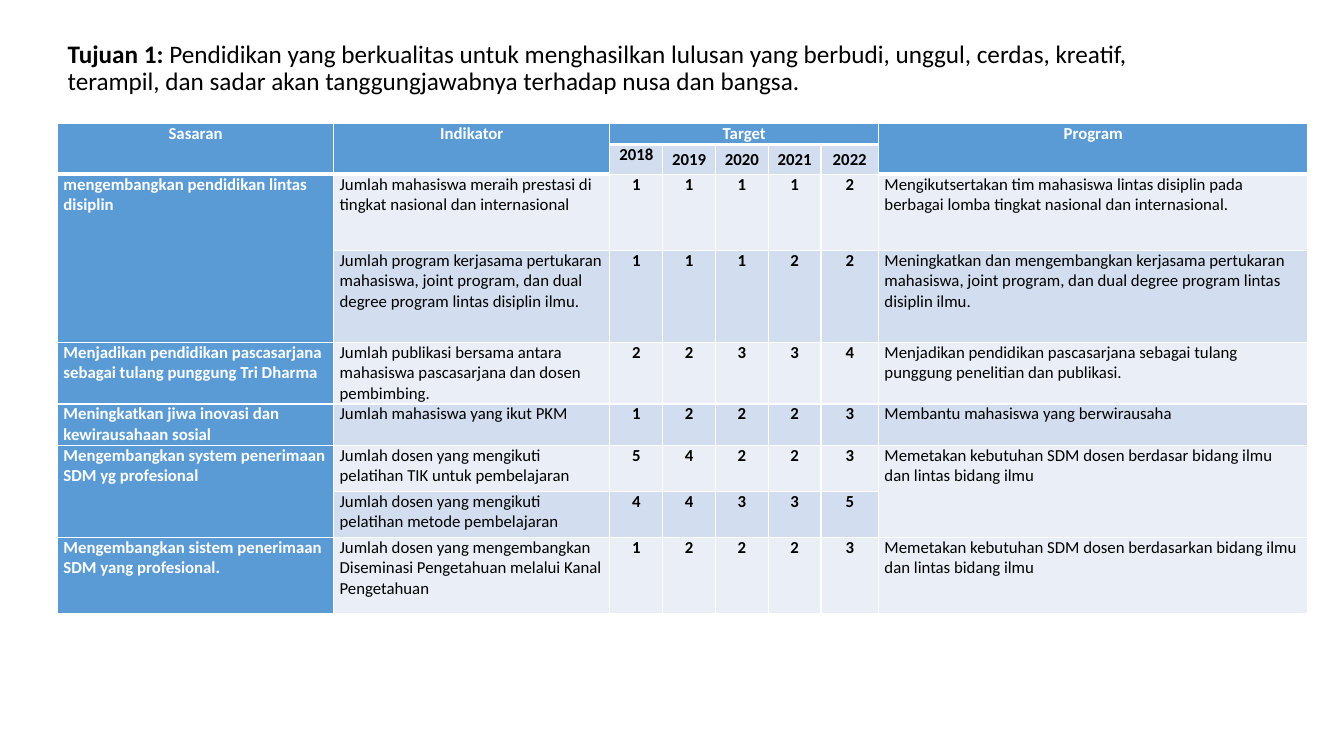
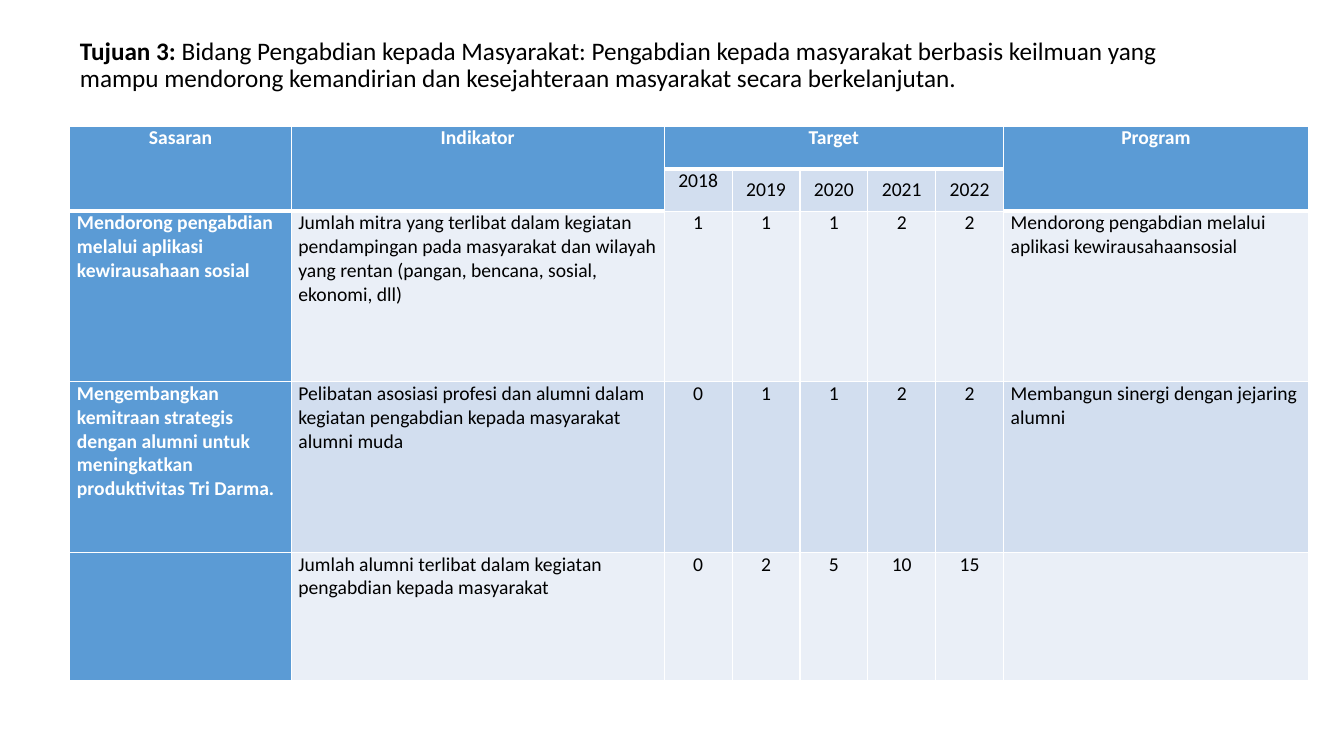
import lxml.etree
import pptx
import pptx.dml.color
import pptx.enum.text
import pptx.oxml.ns
import pptx.util

Cm = pptx.util.Cm
Pt = pptx.util.Pt
ALIGN = pptx.enum.text.PP_ALIGN
ANCHOR = pptx.enum.text.MSO_ANCHOR

FONT = "Calibri"
BLUE, PALE, LIGHT = "5B9BD5", "D2DEEF", "EAEFF7"
WHITE, BLACK = "FFFFFF", "000000"
HEADS = ["Sasaran", "Indikator", "Target", "", "", "", "", "Program"]
YEARS = ["", "", "2018", "2019", "2020", "2021", "2022", ""]
FIRST, LAST = 2, 6
SPANS = [(0, 0, 1, 0), (0, 1, 1, 1), (0, FIRST, 0, LAST), (0, 7, 1, 7)]

GOALS = [
    {
        "label": "Tujuan 1: ",
        "text": "Pendidikan yang berkualitas untuk menghasilkan lulusan yang berbudi, unggul, cerdas, kreatif, terampil, dan sadar akan tanggungjawabnya terhadap nusa dan bangsa.",
        "title": (1.45, 0.84, 29.21, 1.8),
        "at": (1.45, 3.12),
        "cols": [6.96, 6.96] + [1.33] * 4 + [1.45, 10.82],
        "rows": [0.52, 0.75, 1.92, 2.32, 1.55, 1.04, 1.16, 1.16, 1.92],
        "size": 12,
        "inset": 0.15,
        "bold": True,
        "spans": [(2, 0, 3, 0), (6, 0, 7, 0), (6, 7, 7, 7)],
        "data": [
            ["mengembangkan pendidikan lintas disiplin",
             "Jumlah mahasiswa meraih prestasi di tingkat nasional dan internasional",
             1, 1, 1, 1, 2,
             "Mengikutsertakan tim mahasiswa lintas disiplin pada berbagai lomba tingkat nasional dan internasional."],
            ["",
             "Jumlah program kerjasama pertukaran mahasiswa, joint program, dan dual degree program lintas disiplin ilmu.",
             1, 1, 1, 2, 2,
             "Meningkatkan dan mengembangkan kerjasama pertukaran mahasiswa, joint program, dan dual degree program lintas disiplin ilmu."],
            ["Menjadikan pendidikan pascasarjana sebagai tulang punggung Tri Dharma",
             "Jumlah publikasi bersama antara mahasiswa pascasarjana dan dosen pembimbing.",
             2, 2, 3, 3, 4,
             "Menjadikan pendidikan pascasarjana sebagai tulang punggung penelitian dan publikasi."],
            ["Meningkatkan jiwa inovasi dan kewirausahaan sosial",
             "Jumlah mahasiswa yang ikut PKM",
             1, 2, 2, 2, 3,
             "Membantu mahasiswa yang berwirausaha"],
            ["Mengembangkan system penerimaan SDM yg profesional",
             "Jumlah dosen yang mengikuti pelatihan TIK untuk pembelajaran",
             5, 4, 2, 2, 3,
             "Memetakan kebutuhan SDM dosen berdasar bidang ilmu dan lintas bidang ilmu"],
            ["",
             "Jumlah dosen yang mengikuti pelatihan metode pembelajaran",
             4, 4, 3, 3, 5,
             ""],
            ["Mengembangkan sistem penerimaan SDM yang profesional.",
             "Jumlah dosen yang mengembangkan Diseminasi Pengetahuan melalui Kanal Pengetahuan",
             1, 2, 2, 2, 3,
             "Memetakan kebutuhan SDM dosen berdasarkan bidang ilmu dan lintas bidang ilmu"],
        ],
    },
    {
        "label": "Tujuan 3: ",
        "text": "Bidang Pengabdian kepada Masyarakat: Pengabdian kepada masyarakat berbasis keilmuan yang mampu mendorong kemandirian dan kesejahteraan masyarakat secara berkelanjutan.",
        "title": (1.76, 0.76, 28.14, 1.8),
        "at": (1.76, 3.18),
        "cols": [5.58, 9.4] + [1.71] * 5 + [7.68],
        "rows": [1.07, 1.07, 4.3, 4.3, 3.23],
        "size": 14,
        "inset": 0.18,
        "bold": False,
        "spans": [],
        "data": [
            ["Mendorong pengabdian melalui aplikasi kewirausahaan sosial",
             "Jumlah mitra yang terlibat dalam kegiatan pendampingan pada masyarakat dan wilayah yang rentan (pangan, bencana, sosial, ekonomi, dll)",
             1, 1, 1, 2, 2,
             "Mendorong pengabdian melalui aplikasi kewirausahaansosial"],
            ["Mengembangkan kemitraan strategis dengan alumni untuk meningkatkan produktivitas Tri Darma.",
             "Pelibatan asosiasi profesi dan alumni dalam kegiatan pengabdian kepada masyarakat alumni muda",
             0, 1, 1, 2, 2,
             "Membangun sinergi dengan jejaring alumni"],
            ["",
             "Jumlah alumni terlibat dalam kegiatan pengabdian kepada masyarakat",
             0, 2, 5, 10, 15,
             ""],
        ],
    },
]


def tint(color, code):
    color.rgb = pptx.dml.color.RGBColor.from_string(code)


def apply(item, style):
    for name, value in style.items():
        setattr(item, name, value)


def write(para, text, size, bold, code):
    run = para.add_run()
    run.text = text
    apply(run.font, {"name": FONT, "size": Pt(size), "bold": bold})
    tint(run.font.color, code)


def title(slide, box, label, text):
    shape = slide.shapes.title
    apply(shape, dict(zip(("left", "top", "width", "height"), map(Cm, box))))
    frame = shape.text_frame
    apply(frame, {"word_wrap": True, "vertical_anchor": ANCHOR.MIDDLE,
                  "auto_size": pptx.enum.text.MSO_AUTO_SIZE.NONE})
    para = frame.paragraphs[0]
    apply(para, {"alignment": ALIGN.LEFT, "line_spacing": 0.9})
    write(para, label, 18, True, BLACK)
    write(para, text, 18, False, BLACK)


def is_head(row, col):
    return row == 0 or (row == 1 and not FIRST <= col <= LAST)


def edge(cell, row, col):
    qn = pptx.oxml.ns.qn
    props = cell._tc.get_or_add_tcPr()
    above = row > 0 and is_head(row - 1, col)
    widths = {"lnL": 1, "lnR": 1, "lnT": 3 if above else 1,
              "lnB": 3 if is_head(row, col) else 1}
    for tag, width in widths.items():
        line = lxml.etree.SubElement(props, qn("a:" + tag), w=str(Pt(width)))
        fill = lxml.etree.SubElement(line, qn("a:solidFill"))
        lxml.etree.SubElement(fill, qn("a:srgbClr"), val=WHITE)


def fill_cell(cell, row, col, value, goal):
    head = is_head(row, col)
    dark = head or col == 0
    year = FIRST <= col <= LAST
    middle = row == 1 and col > FIRST
    edge(cell, row, col)
    apply(cell, {"margin_left": Cm(goal["inset"]), "margin_right": Cm(goal["inset"]),
                 "margin_top": 0, "margin_bottom": 0,
                 "vertical_anchor": ANCHOR.MIDDLE if middle else ANCHOR.TOP})
    cell.fill.solid()
    tint(cell.fill.fore_color, BLUE if dark else PALE if row % 2 else LIGHT)
    para = cell.text_frame.paragraphs[0]
    para.alignment = ALIGN.CENTER if head or year else ALIGN.LEFT
    write(para, str(value), goal["size"], dark or (year and goal["bold"]),
          WHITE if dark else BLACK)


def grid(slide, goal):
    cols, rows = goal["cols"], goal["rows"]
    left, top = goal["at"]
    table = slide.shapes.add_table(len(rows), len(cols), Cm(left), Cm(top),
                                   Cm(sum(cols)), Cm(sum(rows))).table
    for col, width in zip(table.columns, cols):
        col.width = Cm(width)
    for row, height in zip(table.rows, rows):
        row.height = Cm(height)
    for row, values in enumerate([HEADS, YEARS] + goal["data"]):
        for col, value in enumerate(values):
            fill_cell(table.cell(row, col), row, col, value, goal)
    for top, left, low, right in SPANS + goal["spans"]:
        table.cell(top, left).merge(table.cell(low, right))


def main():
    deck = pptx.Presentation()
    apply(deck, {"slide_width": Cm(33.87), "slide_height": Cm(19.05)})
    for goal in GOALS:
        slide = deck.slides.add_slide(deck.slide_layouts[5])
        title(slide, goal["title"], goal["label"], goal["text"])
        grid(slide, goal)
    deck.save("out.pptx")


if __name__ == "__main__":
    main()
